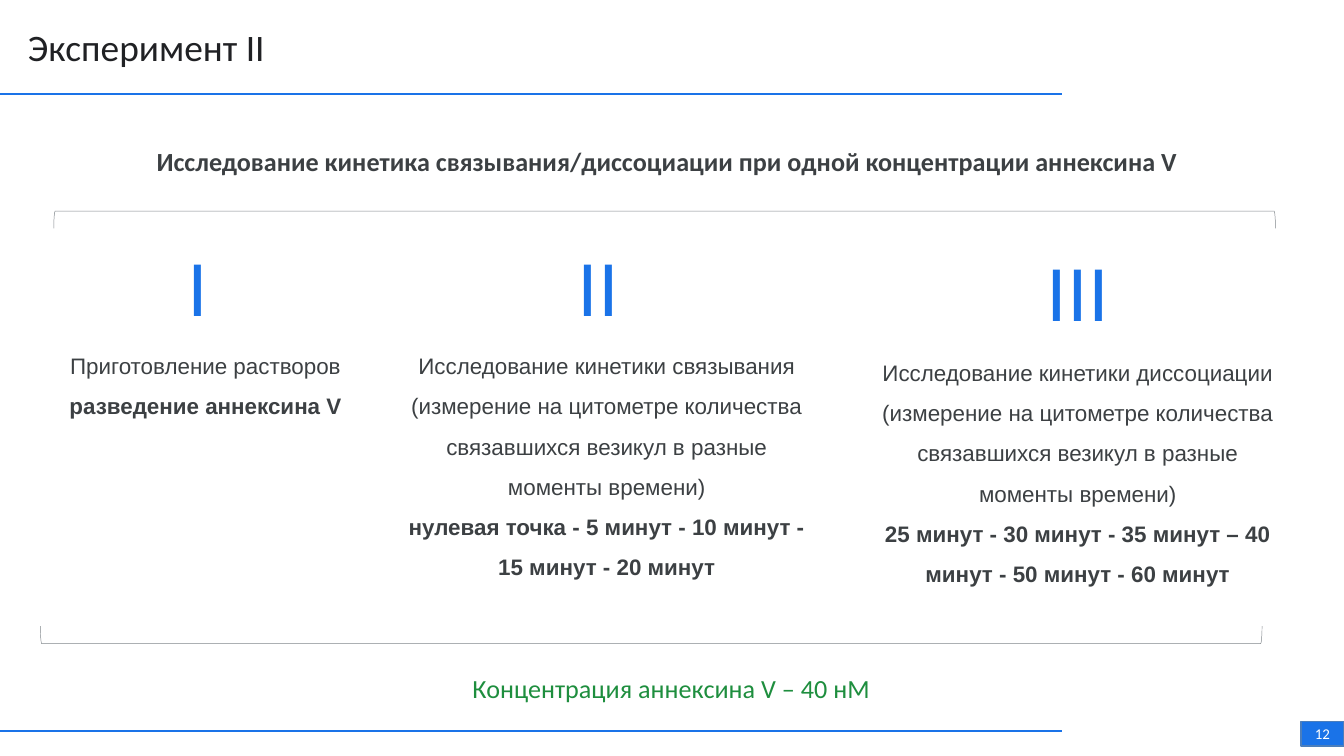
import pptx
import pptx.util
import pptx.dml.color
import pptx.enum.shapes
import pptx.enum.text
import pptx.oxml

SHAPE = pptx.enum.shapes.MSO_SHAPE
ALIGN = pptx.enum.text.PP_ALIGN
ANCHOR = pptx.enum.text.MSO_ANCHOR
CELL = 0.1  # inches; the grid is 100 columns by 56.25 rows
COLORS = {
    "blue": "1A73E8", "edge": "4B7EBC", "gray": "80868B", "text": "3C4043",
    "dark": "202124", "green": "1E8E3E", "white": "FFFFFF",
}


def grid(*cells):
    return [pptx.util.Inches(n * CELL) for n in cells]


def tone(name):
    return pptx.dml.color.RGBColor.from_string(COLORS[name])


class Page:
    def __init__(self, deck):
        self.shapes = deck.slides.add_slide(deck.slide_layouts[6]).shapes

    def label(self, shape, parts, size, color, font="Calibri", align=ALIGN.CENTER,
              space=None, indent=0, inset=(1, 0.5), anchor=ANCHOR.TOP):
        """Fill a shape with (text, bold) paragraphs."""
        frame = shape.text_frame
        frame.word_wrap = True
        frame.vertical_anchor = anchor
        frame.margin_left = frame.margin_right = grid(inset[0])[0]
        frame.margin_top = frame.margin_bottom = grid(inset[1])[0]
        for i, (text, bold) in enumerate(parts):
            para = frame.add_paragraph() if i else frame.paragraphs[0]
            para.alignment = align
            if space:
                para.line_spacing = space
            if indent:
                para._p.get_or_add_pPr().set("marL", str(grid(indent)[0]))
            run = para.add_run()
            run.text = text
            run.font.name = font
            run.font.size = pptx.util.Pt(size)
            run.font.bold = bold
            run.font.color.rgb = tone(color)

    def text(self, box, parts, size, color, **style):
        self.label(self.shapes.add_textbox(*grid(*box)), parts, size, color, **style)

    def shape(self, kind, box, fill=None, line=None, width=1, turn=0):
        shape = self.shapes.add_shape(kind, *grid(*box))
        shape.shadow.inherit = False
        shape.rotation = turn
        if fill:
            shape.fill.solid()
            shape.fill.fore_color.rgb = tone(fill)
        else:
            shape.fill.background()
        if line:
            shape.line.color.rgb = tone(line)
            shape.line.width = pptx.util.Pt(width)
        else:
            shape.line.fill.background()
        return shape

    def rule(self, row, end):
        """Draw a blue line from the left edge to column end."""
        line = self.shapes.add_connector(
            pptx.enum.shapes.MSO_CONNECTOR.STRAIGHT, *grid(0, row, end, row))
        line.line.color.rgb = tone("blue")
        line.line.width = pptx.util.Pt(1)
        props = line._element.spPr
        props.append(props.makeelement(pptx.oxml.ns.qn("a:effectLst"), {}))

    def stage(self, mark, spot, box, parts):
        """Put a large numeral above its description."""
        self.text(box, parts, 12, "text", font="Arial", space=1.5, indent=1.2)
        self.text(spot, [(mark, False)], 40, "blue", font="Arial")


def main():
    deck = pptx.Presentation()
    deck.slide_width, deck.slide_height = grid(100, 56.25)
    page = Page(deck)

    head = page.shape(SHAPE.ROUNDED_RECTANGLE, (1.1, 8.7, 97.1, 6.6))
    page.label(head, [("Исследование кинетика связывания/диссоциации при одной "
                       "концентрации аннексина V", True)],
               14, "text", anchor=ANCHOR.MIDDLE)

    detail = ("(измерение на цитометре количества связавшихся везикул "
              "в разные моменты времени)")
    stages = [
        ("I", (11.9, 17.5, 5.6, 7.7), (1.9, 24.7, 25.6, 6.7),
         "Приготовление растворов", "разведение аннексина V"),
        ("II", (41.7, 17.5, 5.6, 7.7), (27.5, 24.7, 34.1, 21.8),
         f"Исследование кинетики связывания {detail}",
         "нулевая точка - 5 минут - 10 минут - 15 минут - 20 минут"),
        ("III", (76.5, 17.9, 7.4, 7.7), (63.1, 25.2, 33, 18.8),
         f"Исследование кинетики диссоциации {detail}",
         "25 минут - 30 минут - 35 минут – 40 минут - 50 минут - 60 минут"),
    ]
    for mark, spot, box, task, times in stages:
        page.stage(mark, spot, box, [(task, False), (times, True)])

    page.text((5, 48.4, 89.9, 4.2), [("Концентрация аннексина V – 40 нМ", False)],
              14, "green", space=1.5)

    for left, top, turn in ((47.8, 1.8, 90), (48.8, -29.1, 270)):
        page.shape(SHAPE.RIGHT_BRACKET, (left, top, 1.3, 90.9),
                   line="gray", width=0.25, turn=turn)
    for row in (7, 54.4):
        page.rule(row, 79)

    badge = page.shape(SHAPE.RECTANGLE, (96.8, 53.7, 3.2, 1.8), "blue", "edge", 0.75)
    page.label(badge, [("12", False)], 8, "white", inset=(0, 0), anchor=ANCHOR.MIDDLE)
    page.text((1.1, 0.8, 66.2, 6.2), [("Эксперимент II", False)], 20, "dark",
              align=ALIGN.LEFT, inset=(1, 1))

    deck.save("out.pptx")


if __name__ == "__main__":
    main()
